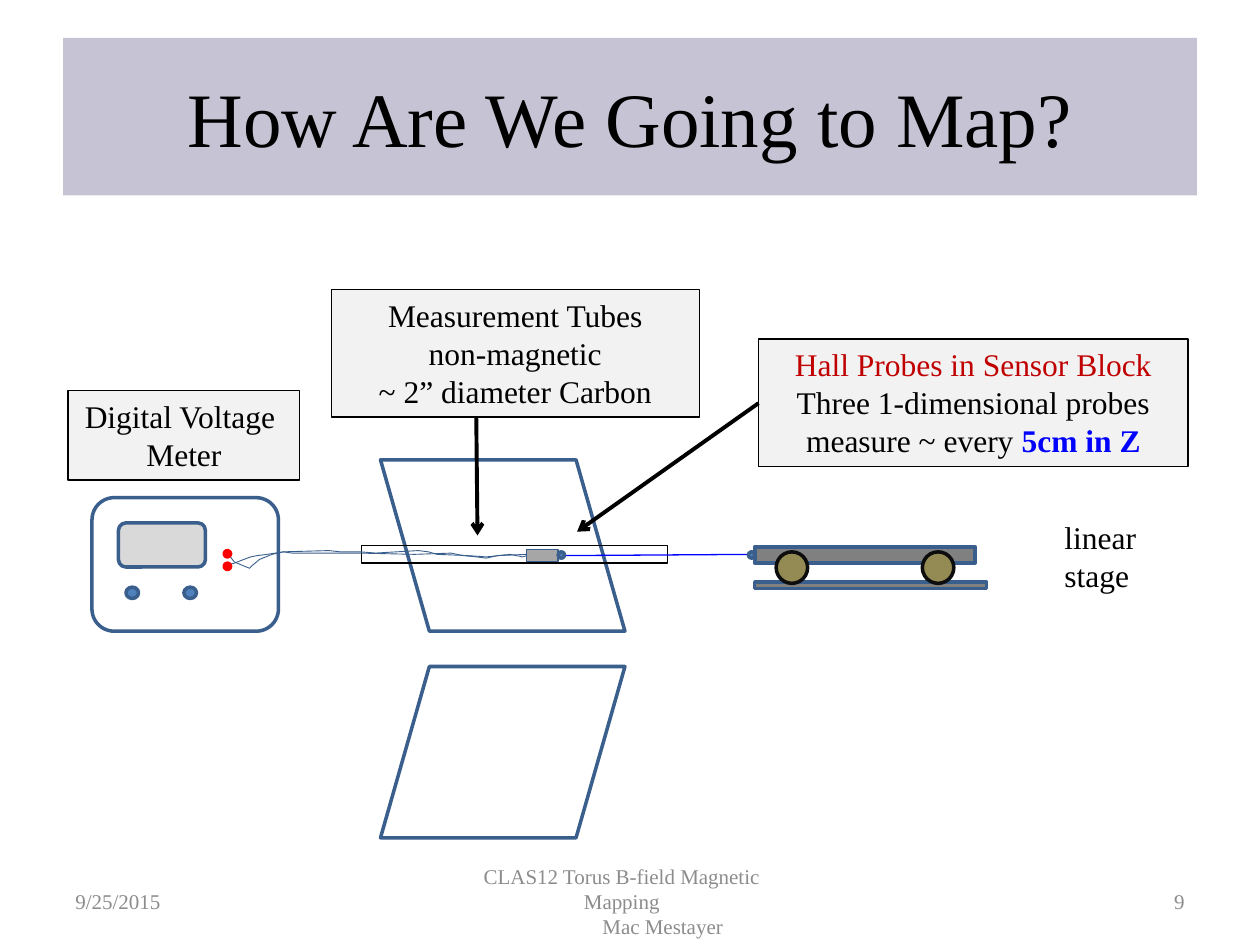
from lxml import etree
from pptx import Presentation
from pptx.dml.color import RGBColor
from pptx.enum.shapes import MSO_CONNECTOR, MSO_SHAPE as Shape
from pptx.enum.text import MSO_ANCHOR as Anchor, PP_ALIGN as Align
from pptx.oxml.ns import qn
from pptx.util import Inches, Pt

FONT = "Times New Roman"
BLACK = RGBColor(0x00, 0x00, 0x00)
LAVENDER = RGBColor(0xC6, 0xC4, 0xD4)
PALE_GRAY = RGBColor(0xF2, 0xF2, 0xF2)
LIGHT_GRAY = RGBColor(0xD9, 0xD9, 0xD9)
SENSOR_GRAY = RGBColor(0xA6, 0xA6, 0xA6)
STAGE_GRAY = RGBColor(0x80, 0x80, 0x80)
FOOTER_GRAY = RGBColor(0x8C, 0x8C, 0x8C)
STEEL = RGBColor(0x3A, 0x5F, 0x8C)
KNOB_BLUE = RGBColor(0x4F, 0x81, 0xBD)
BLUE = RGBColor(0x00, 0x00, 0xFF)
RED = RGBColor(0xFF, 0x00, 0x00)
DARK_RED = RGBColor(0xC0, 0x00, 0x00)
OLIVE = RGBColor(0x94, 0x8A, 0x54)
TIRE = RGBColor(0x0D, 0x0D, 0x0D)


def add_outlined(shapes, kind, box, fill=None, line=STEEL, width=2):
    """Add a preset shape; box is left, top, width, height in inches."""
    shape = shapes.add_shape(kind, *[Inches(value) for value in box])
    shape.shadow.inherit = False
    if fill is None:
        shape.fill.background()
    else:
        shape.fill.solid()
        shape.fill.fore_color.rgb = fill
    shape.line.color.rgb = line
    shape.line.width = Pt(width)
    return shape


def write_paragraphs(frame, paragraphs, size, align):
    """Fill a frame; each paragraph is a list of (text, colour, bold) spans."""
    frame.word_wrap = True
    for index, spans in enumerate(paragraphs):
        para = frame.paragraphs[0] if index == 0 else frame.add_paragraph()
        para.alignment = align
        for text, color, bold in spans:
            span = para.add_run()
            span.text = text
            span.font.name = FONT
            span.font.size = Pt(size)
            span.font.color.rgb = color
            span.font.bold = bold


deck = Presentation()
deck.slide_width, deck.slide_height = Inches(10), Inches(7.5)
page = deck.slides.add_slide(deck.slide_layouts[5])
shapes = page.shapes

# Title
title = shapes.title
title.left, title.top = Inches(0.5), Inches(0.3)
title.width, title.height = Inches(9), Inches(1.25)
title.fill.solid()
title.fill.fore_color.rgb = LAVENDER
title.text_frame.vertical_anchor = Anchor.MIDDLE
write_paragraphs(title.text_frame, [[("How Are We Going to Map?", BLACK, False)]],
                 44, Align.CENTER)

# Magnet coils, measurement tube and sensor block
upper_coil = add_outlined(shapes, Shape.FLOWCHART_DATA, (3.02, 3.65, 1.94, 1.36))
upper_coil._element.spPr.get_or_add_xfrm().set("flipV", "1")
add_outlined(shapes, Shape.FLOWCHART_DATA, (3.02, 5.29, 1.94, 1.36))
add_outlined(shapes, Shape.RECTANGLE, (2.87, 4.33, 2.43, 0.14), None, BLACK, 0.75)
add_outlined(shapes, Shape.RECTANGLE, (4.18, 4.36, 0.25, 0.1), SENSOR_GRAY, STEEL, 0.75)

# Signal wires from the sensor block to the meter
wires = [
    [(4.18, 4.41), (4.15, 4.42), (4.05, 4.4), (3.95, 4.41), (3.86, 4.43),
     (3.78, 4.42), (3.68, 4.41), (3.58, 4.39), (3.29, 4.4), (2.86, 4.39),
     (2.32, 4.39), (2.25, 4.38), (2.12, 4.4), (2.04, 4.41), (1.99, 4.42),
     (1.91, 4.45), (1.86, 4.47), (1.78, 4.49)],
    [(4.18, 4.4), (3.96, 4.41), (3.86, 4.42), (3.71, 4.41), (3.47, 4.4),
     (3.4, 4.38), (3.32, 4.37), (2.98, 4.39), (2.86, 4.38), (2.7, 4.38),
     (2.61, 4.37), (2.25, 4.38), (2.16, 4.4), (2.06, 4.44), (2.0, 4.49),
     (1.98, 4.51), (1.93, 4.49), (1.86, 4.46), (1.82, 4.41), (1.8, 4.4)],
]
for wire in wires:
    points = [(Inches(x), Inches(y)) for x, y in wire]
    builder = shapes.build_freeform(*points[0])
    builder.add_line_segments(points[1:], close=False)
    curve = builder.convert_to_shape()
    curve.shadow.inherit = False
    curve.fill.background()
    curve.line.color.rgb = STEEL
    curve.line.width = Pt(0.5)

# Digital voltage meter
add_outlined(shapes, Shape.ROUNDED_RECTANGLE, (0.73, 3.95, 1.48, 1.06))
for top in (4.37, 4.47):
    add_outlined(shapes, Shape.OVAL, (1.78, top, 0.05, 0.05), RED, RED)
for left in (1.0, 1.46):
    add_outlined(shapes, Shape.OVAL, (left, 4.66, 0.1, 0.09), KNOB_BLUE)
add_outlined(shapes, Shape.ROUNDED_RECTANGLE, (0.94, 4.15, 0.69, 0.35), LIGHT_GRAY)

# Callouts
callouts = [
    ((0.54, 3.1, 1.84, 0.71),
     [[("Digital Voltage ", BLACK, False)], [("Meter", BLACK, False)]]),
    ((6.02, 2.69, 3.41, 1.01),
     [[("Hall Probes in Sensor Block", DARK_RED, False)],
      [("Three 1-dimensional probes", BLACK, False)],
      [("measure ~ every ", BLACK, False), ("5cm in Z", BLUE, True)]]),
    ((2.63, 2.3, 2.92, 1.01),
     [[("Measurement Tubes", BLACK, False)],
      [("non-magnetic", BLACK, False)],
      [("~ 2” diameter Carbon", BLACK, False)]]),
]
for box, paragraphs in callouts:
    callout = add_outlined(shapes, Shape.RECTANGLE, box, PALE_GRAY, BLACK, 0.75)
    callout.text_frame.vertical_anchor = Anchor.TOP
    write_paragraphs(callout.text_frame, paragraphs, 18, Align.CENTER)

# Callout arrows and the cable that pulls the sensor block
connectors = [
    ((6.02, 3.2, 4.58, 4.22), BLACK, 2.25, True),
    ((3.78, 3.31, 3.79, 4.25), BLACK, 2.25, True),
    ((4.43, 4.41, 5.94, 4.4), BLUE, 0.75, False),
]
for ends, color, width, has_arrow in connectors:
    connector = shapes.add_connector(MSO_CONNECTOR.STRAIGHT,
                                     *[Inches(value) for value in ends])
    connector.line.color.rgb = color
    connector.line.width = Pt(width)
    if has_arrow:
        etree.SubElement(connector.line._get_or_add_ln(), qn("a:tailEnd"), type="arrow")
    etree.SubElement(connector._element.spPr, qn("a:effectLst"))

# Linear stage: rail, cart and wheels
stage = shapes.add_group_shape().shapes
add_outlined(stage, Shape.RECTANGLE, (5.99, 4.62, 1.84, 0.05), STAGE_GRAY)
add_outlined(stage, Shape.RECTANGLE, (5.99, 4.34, 1.75, 0.13), STAGE_GRAY)
for left in (6.16, 7.32):
    add_outlined(stage, Shape.OVAL, (left, 4.38, 0.25, 0.25), OLIVE, TIRE)

# Cable ends
for left in (4.43, 5.94):
    add_outlined(shapes, Shape.OVAL, (left, 4.38, 0.05, 0.05), KNOB_BLUE)

# Stage label and footer
labels = [
    ((8.35, 4.06, 0.83, 0.71), ["linear stage"], 18, BLACK, Align.LEFT, Anchor.TOP),
    ((0.5, 6.95, 2.33, 0.4), ["9/25/2015"], 12, FOOTER_GRAY, Align.LEFT, Anchor.MIDDLE),
    ((3.42, 6.95, 3.17, 0.4), ["CLAS12 Torus B-field Magnetic Mapping", "Mac Mestayer"],
     12, FOOTER_GRAY, Align.CENTER, Anchor.MIDDLE),
    ((7.17, 6.95, 2.33, 0.4), ["9"], 12, FOOTER_GRAY, Align.RIGHT, Anchor.MIDDLE),
]
for box, lines, size, color, align, anchor in labels:
    label = shapes.add_textbox(*[Inches(value) for value in box])
    label.text_frame.vertical_anchor = anchor
    write_paragraphs(label.text_frame, [[(line, color, False)] for line in lines],
                     size, align)
    if len(lines) == 2:
        # The first footer line sits left of centre, the author's name right of it
        for para, side, indent in zip(label.text_frame.paragraphs,
                                      ("marR", "marL"), (0.14, 0.65)):
            para._p.get_or_add_pPr().set(side, str(Inches(indent)))

deck.save("out.pptx")
